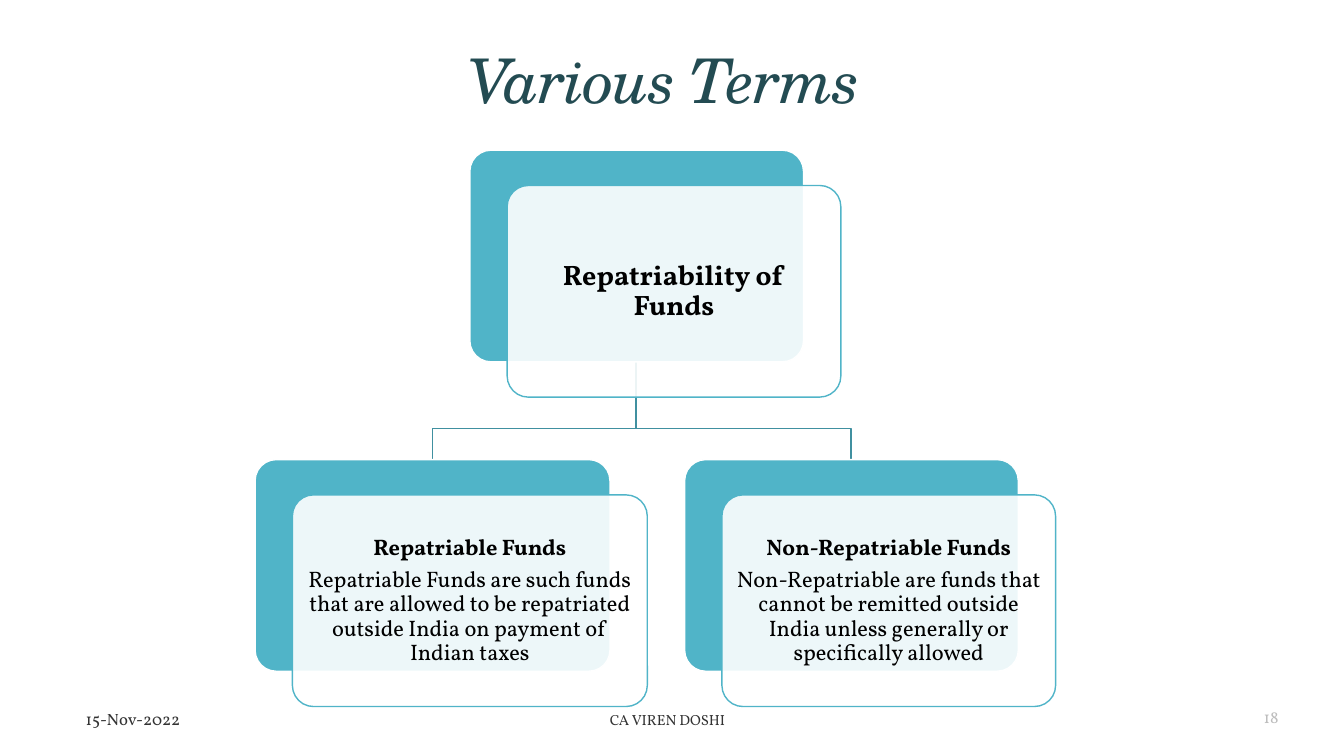
from dataclasses import dataclass

from lxml import etree
from pptx import Presentation
from pptx import util as u
from pptx.dml.color import RGBColor
from pptx.enum import shapes, text
from pptx.oxml.ns import qn

PX = 9144  # 100 px to the inch
TEAL = RGBColor(0x50, 0xB4, 0xC8)
BRANCH = RGBColor(0x40, 0x90, 0xA0)
TITLE_INK = RGBColor(0x23, 0x4B, 0x52)
BLACK = RGBColor(0, 0, 0)
WHITE = RGBColor(0xFF, 0xFF, 0xFF)
SERIF = "Vollkorn"

CARD_HEIGHT = 210
FRONT_SHIFT_X, FRONT_SHIFT_Y = 37, 35
ROOT_TOP, CHILD_TOP, FORK_Y = 149, 456, 425


@dataclass(frozen=True)
class Card:
    left: int
    top: int
    width: int
    size: int
    inset: int
    heading: str
    body: str = ""

    @property
    def middle(self) -> int:
        return self.left + self.width // 2


@dataclass(frozen=True)
class FooterItem:
    left: int
    width: int
    wording: str
    size: float
    opacity: int
    align: text.PP_ALIGN
    anchor: text.MSO_ANCHOR = text.MSO_ANCHOR.MIDDLE


ROOT = Card(466, ROOT_TOP, 331, 20, 8, "Repatriability of Funds")
CHILDREN = [
    Card(679, CHILD_TOP, 331, 16, 7, "Non-Repatriable Funds",
         "Non-Repatriable are funds that cannot be remitted outside India "
         "unless generally or specifically allowed"),
    Card(253, CHILD_TOP, 352, 16, 7, "Repatriable Funds",
         "Repatriable Funds are such funds that are allowed to be repatriated "
         "outside India on payment of Indian taxes"),
]
FOOTER = [
    FooterItem(75, 450, "15-Nov-2022", 12, 80, text.PP_ALIGN.LEFT),
    FooterItem(387, 550, "CA VIREN DOSHI", 10.5, 80, text.PP_ALIGN.CENTER),
    FooterItem(970, 308, "18", 12, 25, text.PP_ALIGN.RIGHT, text.MSO_ANCHOR.BOTTOM),
]


def set_opacity(properties, percent: int) -> None:
    """Make the first solid colour below an XML element partly transparent."""
    colour = properties.find(".//" + qn("a:srgbClr"))
    etree.SubElement(colour, qn("a:alpha")).set("val", str(percent * 1000))


def add_run(paragraph, wording: str, size: float, bold: bool = False,
            colour: RGBColor = BLACK, face: str = SERIF):
    run = paragraph.add_run()
    run.text = wording
    run.font.name, run.font.size, run.font.bold = face, u.Pt(size), bold
    run.font.color.rgb = colour
    return run


def add_panel(slide, left: int, top: int, width: int, fill: RGBColor, line: RGBColor):
    panel = slide.shapes.add_shape(
        shapes.MSO_SHAPE.ROUNDED_RECTANGLE,
        left * PX, top * PX, width * PX, CARD_HEIGHT * PX)
    panel.adjustments[0] = 0.1
    panel.shadow.inherit = False
    panel.fill.solid()
    panel.fill.fore_color.rgb = fill
    panel.line.color.rgb = line
    panel.line.width = u.Pt(1)
    return panel


def add_card(slide, card: Card) -> None:
    """Draw a solid panel with a see-through panel, holding the text, over it."""
    add_panel(slide, card.left, card.top, card.width, TEAL, WHITE)
    front = add_panel(slide, card.left + FRONT_SHIFT_X, card.top + FRONT_SHIFT_Y,
                      card.width, WHITE, TEAL)
    set_opacity(front.fill._xPr, 90)
    frame = front.text_frame
    frame.word_wrap = True
    frame.vertical_anchor = text.MSO_ANCHOR.MIDDLE
    frame.margin_left = frame.margin_right = card.inset * PX
    frame.margin_top = frame.margin_bottom = card.inset * PX
    paragraph = frame.paragraphs[0]
    add_run(paragraph, card.heading, card.size, bold=True)
    if card.body:
        add_run(frame.add_paragraph(), card.body, card.size)
    for paragraph in frame.paragraphs:
        paragraph.alignment = text.PP_ALIGN.CENTER
        paragraph.line_spacing = 0.9
        paragraph.space_after = u.Pt(0.35 * card.size)


def add_branch(slide, parent: Card, child: Card) -> None:
    outline = slide.shapes.build_freeform(
        parent.middle, parent.top + CARD_HEIGHT, scale=PX)
    outline.add_line_segments(
        [(parent.middle, FORK_Y), (child.middle, FORK_Y), (child.middle, child.top)],
        close=False)
    branch = outline.convert_to_shape()
    branch.shadow.inherit = False
    branch.fill.background()
    branch.line.color.rgb = BRANCH
    branch.line.width = u.Pt(1)


def add_footer_item(slide, item: FooterItem) -> None:
    box = slide.shapes.add_textbox(item.left * PX, 701 * PX, item.width * PX, 25 * PX)
    frame = box.text_frame
    frame.word_wrap = True
    frame.vertical_anchor = item.anchor
    paragraph = frame.paragraphs[0]
    paragraph.alignment = item.align
    run = add_run(paragraph, item.wording, item.size)
    set_opacity(run._r, item.opacity)


def add_title(slide) -> None:
    title = slide.shapes.title
    title.left, title.top, title.width, title.height = (
        side * PX for side in (387, 34, 543, 99))
    frame = title.text_frame
    frame.auto_size = text.MSO_AUTO_SIZE.NONE
    frame.vertical_anchor = text.MSO_ANCHOR.MIDDLE
    paragraph = frame.paragraphs[0]
    paragraph.alignment = text.PP_ALIGN.CENTER
    paragraph.line_spacing = 0.85
    run = add_run(paragraph, "Various Terms", 44, colour=TITLE_INK, face="TeX Gyre Schola")
    run.font.italic = True
    run._r.get_or_add_rPr().set("spc", "-120")


def main() -> None:
    deck = Presentation()
    deck.slide_width, deck.slide_height = 1333 * PX, 750 * PX
    slide = deck.slides.add_slide(deck.slide_layouts[5])
    add_title(slide)
    for child in CHILDREN:
        add_branch(slide, ROOT, child)
    for card in (ROOT, *reversed(CHILDREN)):
        add_card(slide, card)
    for item in FOOTER:
        add_footer_item(slide, item)
    deck.save("out.pptx")


if __name__ == "__main__":
    main()
